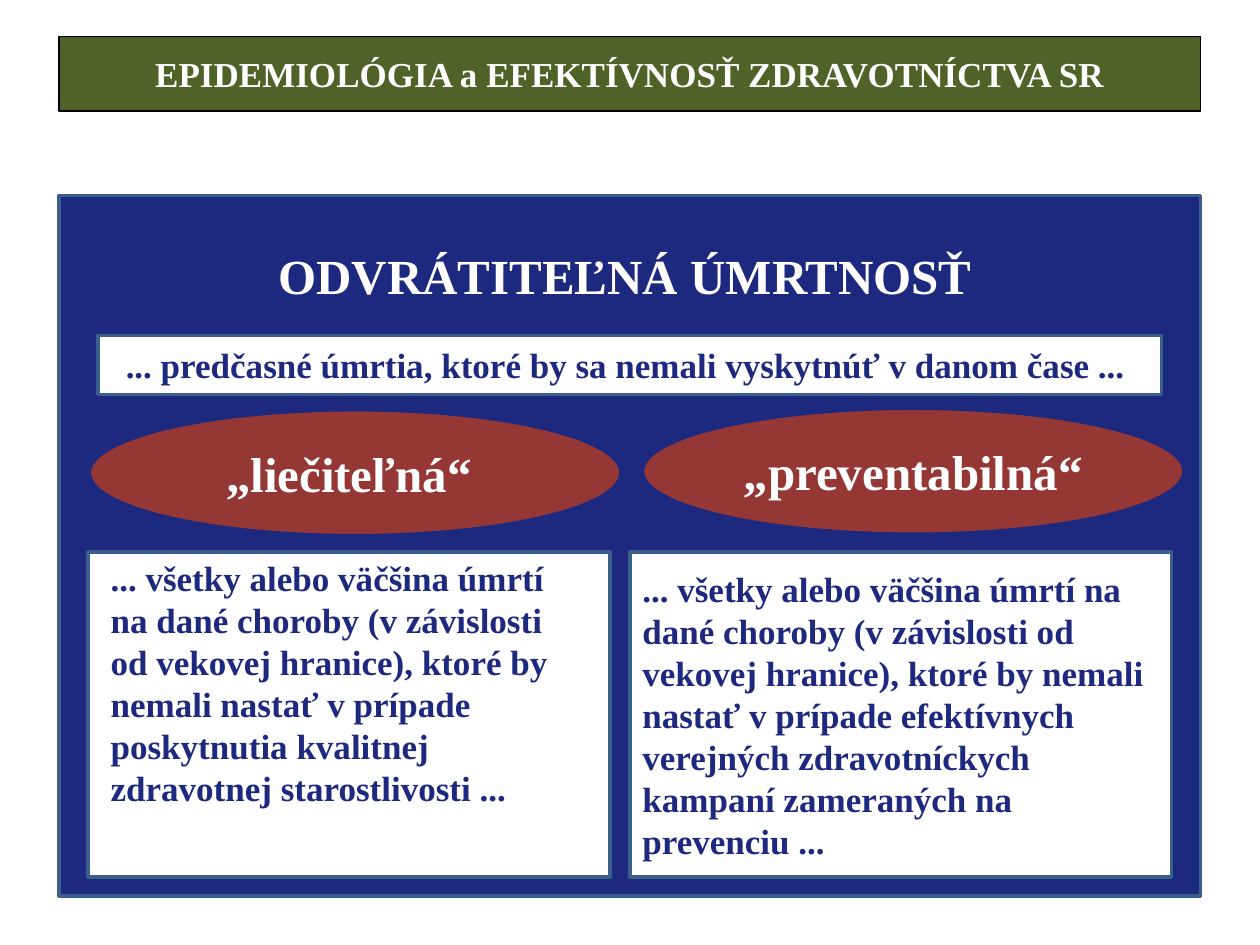
from pptx import Presentation
from pptx import util as u
from pptx.dml.color import RGBColor
from pptx.enum import shapes, text

NAVY = RGBColor(0x1D, 0x29, 0x7F)
STEEL = RGBColor(0x3A, 0x5F, 0x8C)
BRICK = RGBColor(0x95, 0x37, 0x35)
OLIVE = RGBColor(0x4F, 0x62, 0x28)
WHITE = RGBColor(0xFF, 0xFF, 0xFF)
BLACK = RGBColor(0, 0, 0)

RECT = shapes.MSO_SHAPE.RECTANGLE
OVAL = shapes.MSO_SHAPE.OVAL
LEFT = text.PP_ALIGN.LEFT
CENTER = text.PP_ALIGN.CENTER

PANEL_LEFT, PANEL_WIDTH = 1.19, 23.01
HEADING_SIZE, BODY_SIZE = 28, 20
BOX_TOP, BOX_HEIGHT = 11.13, 6.55


def to_cm(lengths):
    return [u.Cm(length) for length in lengths]


def paint(element, fill, line, weight=2):
    element.fill.solid()
    element.fill.fore_color.rgb = fill
    element.line.color.rgb = line
    element.line.width = u.Pt(weight)


def write(element, wording, size, color, align=CENTER):
    frame = element.text_frame
    frame.word_wrap = True
    frame.vertical_anchor = text.MSO_ANCHOR.MIDDLE
    paragraph = frame.paragraphs[0]
    paragraph.alignment = align
    run = paragraph.add_run()
    run.text = wording
    look = {"name": "Times New Roman", "size": u.Pt(size), "bold": True}
    for attribute, value in look.items():
        setattr(run.font, attribute, value)
    run.font.color.rgb = color


def add_block(slide, kind, area, fill, line):
    block = slide.shapes.add_shape(kind, *to_cm(area))
    block.shadow.inherit = False
    paint(block, fill, line)
    return block


def add_title(slide, wording):
    title = slide.shapes.title
    area = to_cm((PANEL_LEFT, 0.74, PANEL_WIDTH, 1.5))
    for attribute, value in zip(("left", "top", "width", "height"), area):
        setattr(title, attribute, value)
    paint(title, OLIVE, BLACK, 0.75)
    write(title, wording, BODY_SIZE, WHITE)


def add_category(slide, area, wording):
    category = add_block(slide, OVAL, area, BRICK, NAVY)
    write(category, wording, HEADING_SIZE, WHITE)


def main():
    deck = Presentation()
    deck.slide_width, deck.slide_height = to_cm((25.4, 19.05))
    slide = deck.slides.add_slide(deck.slide_layouts[5])

    add_title(slide, "EPIDEMIOLÓGIA a EFEKTÍVNOSŤ ZDRAVOTNÍCTVA SR")
    add_block(slide, RECT, (PANEL_LEFT, 3.94, PANEL_WIDTH, 14.12), NAVY, STEEL)

    heading = add_block(slide, RECT, (1.78, 4.95, 21.64, 1.19), NAVY, NAVY)
    write(heading, "ODVRÁTITEĽNÁ ÚMRTNOSŤ", HEADING_SIZE, WHITE)

    add_category(slide, (1.8, 8.26, 10.72, 2.54), "„liečiteľná“ ")
    add_category(slide, (12.95, 8.23, 10.92, 2.54), "„preventabilná“")

    add_block(slide, RECT, (1.78, BOX_TOP, 10.52, BOX_HEIGHT), WHITE, STEEL)
    preventable = add_block(
        slide, RECT, (12.7, BOX_TOP, 10.92, BOX_HEIGHT), WHITE, STEEL)
    write(preventable,
          "... všetky alebo väčšina úmrtí na dané choroby (v závislosti od "
          "vekovej hranice), ktoré by nemali nastať v prípade efektívnych "
          "verejných zdravotníckych kampaní zameraných na prevenciu ...",
          BODY_SIZE, NAVY, LEFT)

    treatable = slide.shapes.add_textbox(*to_cm((1.98, 11.07, 9.73, 5.38)))
    write(treatable,
          "... všetky alebo väčšina úmrtí na dané choroby (v závislosti od "
          "vekovej hranice), ktoré by nemali nastať v prípade poskytnutia "
          "kvalitnej zdravotnej starostlivosti ...",
          BODY_SIZE, NAVY, LEFT)

    definition = add_block(slide, RECT, (1.98, 6.76, 21.44, 1.19), WHITE, STEEL)
    write(definition,
          "... predčasné úmrtia, ktoré by sa nemali vyskytnúť v danom čase ... ",
          BODY_SIZE, NAVY)

    deck.save("out.pptx")


if __name__ == "__main__":
    main()
